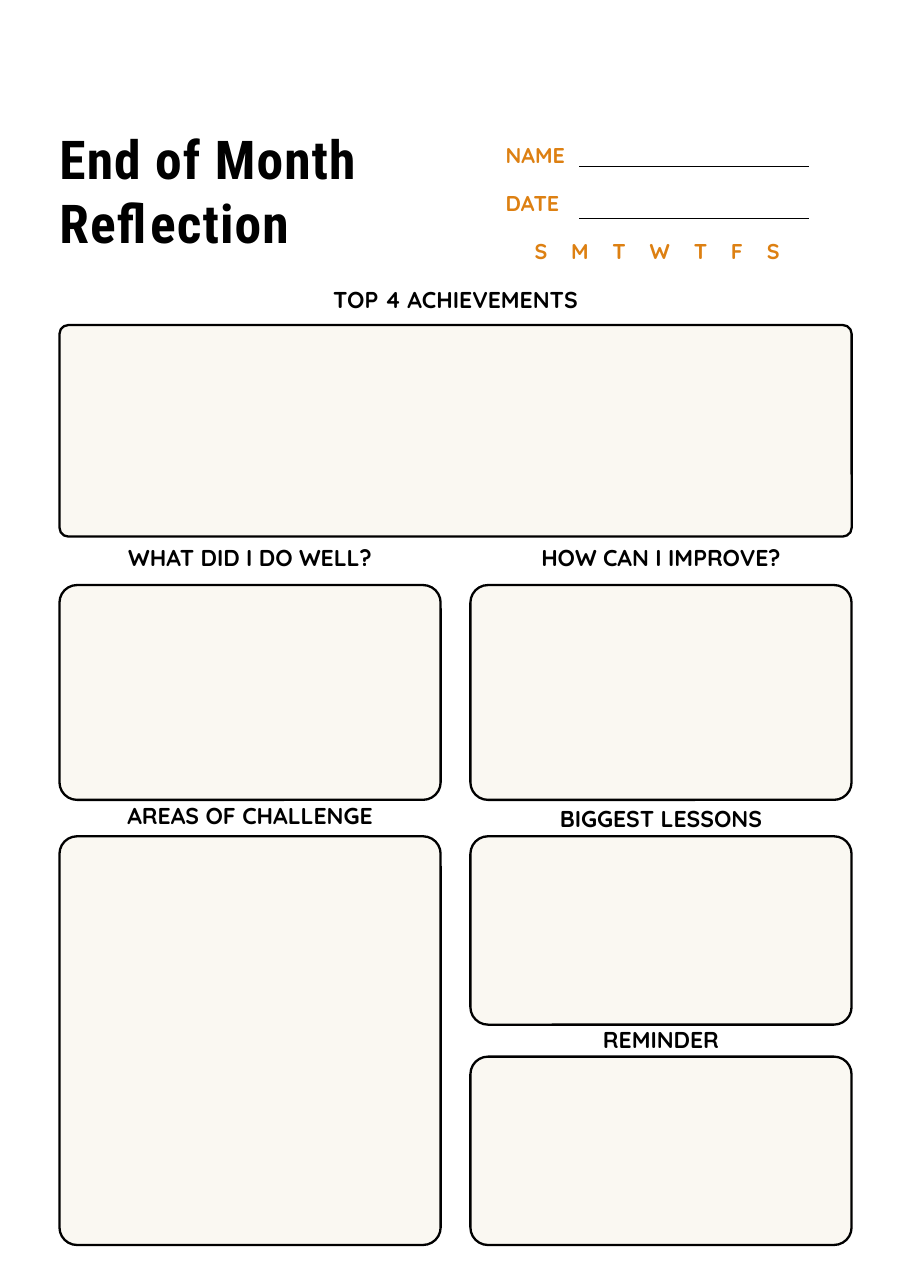
from lxml.etree import SubElement
from pptx import Presentation
from pptx.dml.color import RGBColor
from pptx.enum.shapes import MSO_CONNECTOR, MSO_SHAPE
from pptx.enum.text import PP_ALIGN
from pptx.oxml.ns import qn
from pptx.util import Inches, Pt

COLORS = {"ink": "000000", "accent": "DD8012", "panel": "FAF8F2"}

TITLE = {"name": "Roboto Condensed", "size": Pt(35), "bold": True}
HEADING = {"name": "Quicksand", "size": Pt(15), "bold": True}
FIELD = {"name": "Quicksand", "size": Pt(14), "bold": True}

LEFT, COLUMN, GUTTER = 0.54, 3.46, 0.27
RIGHT = LEFT + COLUMN + GUTTER
FULL = 2 * COLUMN + GUTTER

# heading, heading top, left, panel top, width, height, corner radius
PANELS = [
    ("TOP 4 ACHIEVEMENTS", 2.55, LEFT, 2.95, FULL, 1.92, 0.08),
    ("WHAT DID I DO WELL?", 4.89, LEFT, 5.31, COLUMN, 1.95, 0.16),
    ("HOW CAN I IMPROVE?", 4.89, RIGHT, 5.31, COLUMN, 1.95, 0.16),
    ("AREAS OF CHALLENGE", 7.23, LEFT, 7.59, COLUMN, 3.71, 0.16),
    ("BIGGEST LESSONS", 7.26, RIGHT, 7.59, COLUMN, 1.71, 0.16),
    ("REMINDER", 9.27, RIGHT, 9.59, COLUMN, 1.71, 0.16),
]

# label, label top, rule height on the page
FIELDS = [("NAME", 1.25, 1.51), ("DATE", 1.69, 1.98)]
FIELD_LEFT, RULE_LEFT, RULE_RIGHT = 4.59, 5.26, 7.34


def rgb(color):
    return RGBColor.from_string(COLORS[color])


def add_label(slide, text, left, top, width, height, font, leading,
              color="ink", align=PP_ALIGN.LEFT, tracking=0):
    """Add unpadded text; leading and tracking are in points."""
    label = slide.shapes.add_textbox(*map(Inches, (left, top, width, height)))
    frame = label.text_frame
    frame.word_wrap = True
    for side in ("left", "top", "right", "bottom"):
        setattr(frame, f"margin_{side}", 0)
    paragraph = frame.paragraphs[0]
    paragraph.alignment = align
    paragraph.line_spacing = Pt(leading)
    run = paragraph.add_run()
    run.text = text
    for attribute, value in font.items():
        setattr(run.font, attribute, value)
    run.font.color.rgb = rgb(color)
    if tracking:
        run.font._element.set("spc", str(round(tracking * 100)))


def add_panel(slide, left, top, width, height, radius):
    panel = slide.shapes.add_shape(MSO_SHAPE.ROUNDED_RECTANGLE,
                                   *map(Inches, (left, top, width, height)))
    panel.adjustments[0] = radius / min(width, height)
    panel.shadow.inherit = False
    panel.fill.solid()
    panel.fill.fore_color.rgb = rgb("panel")
    panel.line.color.rgb = rgb("ink")
    panel.line.width = Pt(1.5)


def add_writing_rule(slide, y):
    rule = slide.shapes.add_connector(
        MSO_CONNECTOR.STRAIGHT, *map(Inches, (RULE_LEFT, y, RULE_RIGHT, y)))
    rule.line.color.rgb = rgb("ink")
    rule.line.width = Pt(0.75)
    SubElement(rule._element.spPr, qn("a:effectLst"))


def main():
    presentation = Presentation()
    presentation.slide_width = Inches(8.26)
    presentation.slide_height = Inches(11.69)
    slide = presentation.slides.add_slide(presentation.slide_layouts[6])

    add_label(slide, "End of Month Reflection", LEFT, 1.14, 3.74, 1.17,
              TITLE, 42, tracking=0.7)
    for name, top, rule_y in FIELDS:
        add_label(slide, name, FIELD_LEFT, top, RULE_LEFT - FIELD_LEFT, 0.29,
                  FIELD, 19.6, "accent")
        add_writing_rule(slide, rule_y)
    add_label(slide, "S M T W T F S", FIELD_LEFT, 2.12,
              RULE_RIGHT - FIELD_LEFT, 0.29, FIELD, 19.6, "accent",
              PP_ALIGN.CENTER, tracking=5.8)

    for heading, heading_top, left, top, width, height, radius in PANELS:
        add_panel(slide, left, top, width, height, radius)
        add_label(slide, heading, left, heading_top, width, 0.32,
                  HEADING, 21, align=PP_ALIGN.CENTER)

    presentation.save("out.pptx")


if __name__ == "__main__":
    main()
